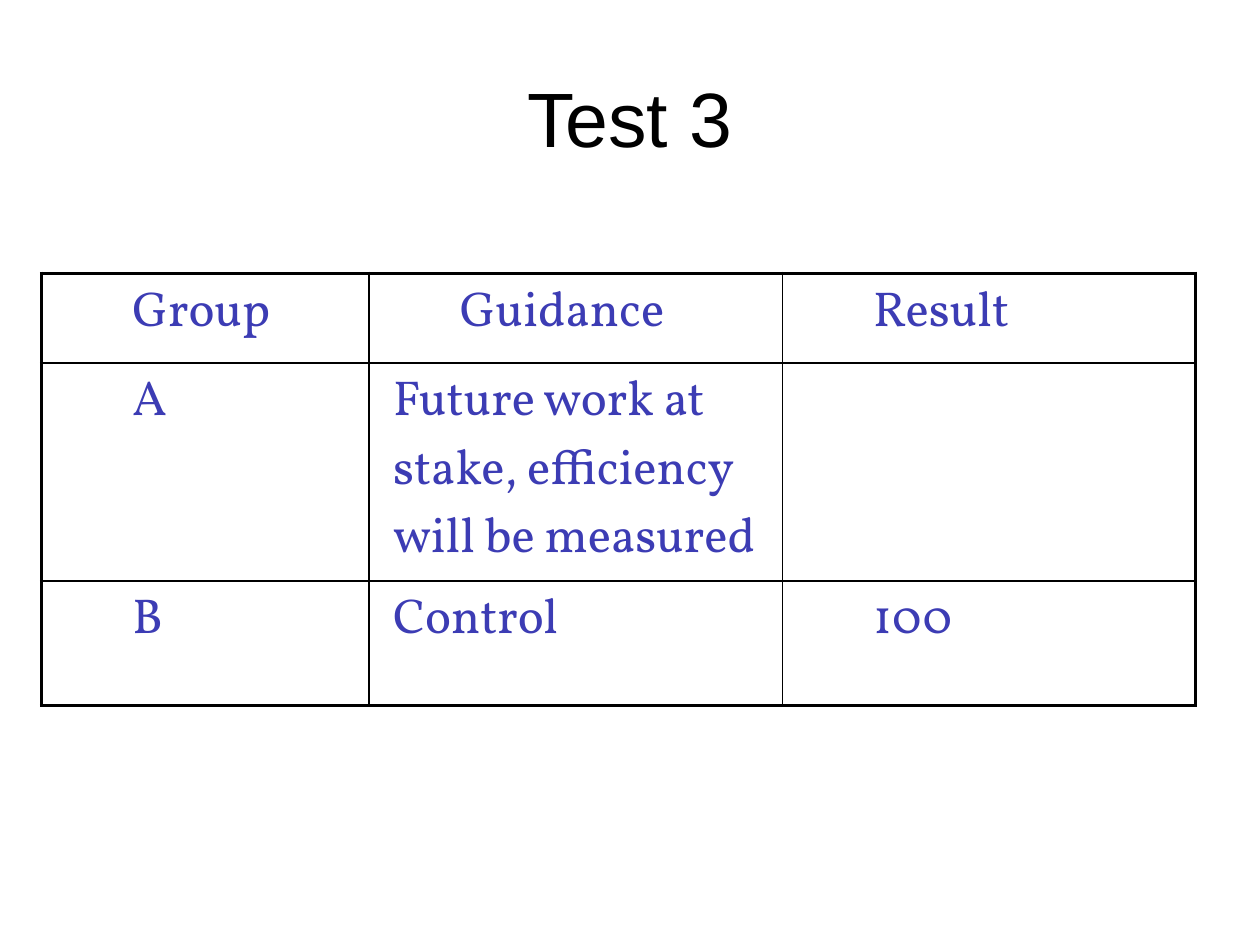
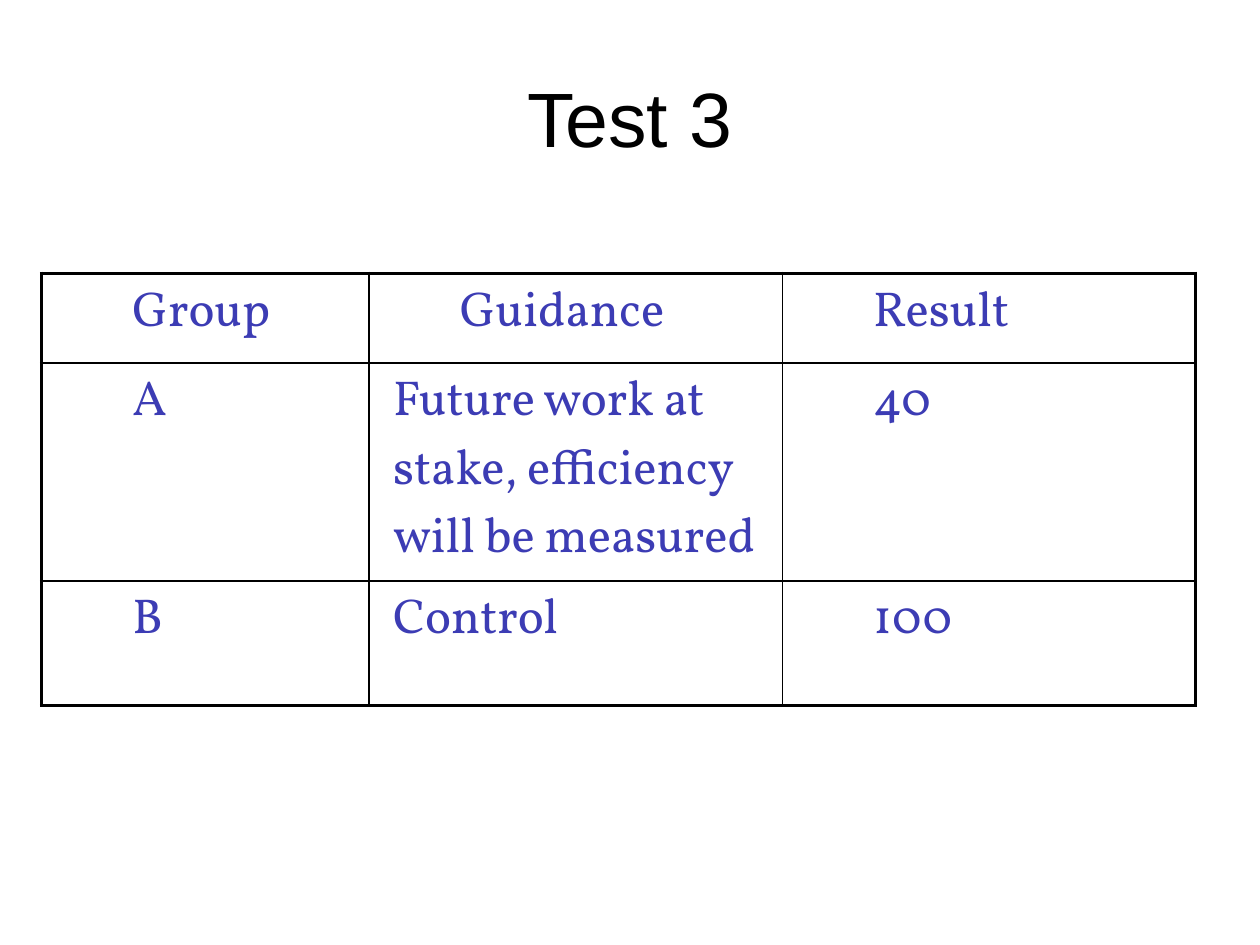
from lxml import etree
from pptx import Presentation
from pptx.dml.color import RGBColor
from pptx.enum.text import MSO_ANCHOR, PP_ALIGN
from pptx.oxml.ns import qn
from pptx.util import Inches, Pt

CENTER = PP_ALIGN.CENTER
MIDDLE = MSO_ANCHOR.MIDDLE
TITLE_ONLY = 5

COLORS = {"title": "000000", "border": "000000", "table text": "3C3CB4"}
TITLE_FONT, TABLE_FONT = "Arial", "Vollkorn"
OUTER_LINE, INNER_LINE = Pt(2.25), Pt(1)

COLUMN_WIDTHS = [2.6, 3.28, 3.28]
ROW_HEIGHTS = [0.71, 1.73, 0.99]
WIDE_INDENT, GUIDANCE_INDENT = 0.62, 0.19


class Deck:
    """Holds the style and the current slide."""

    def __init__(self):
        self.presentation = Presentation()
        self.presentation.slide_width = Inches(10)
        self.presentation.slide_height = Inches(7.5)
        self.slide = None

    def add_slide(self):
        layout = self.presentation.slide_layouts[TITLE_ONLY]
        self.slide = self.presentation.slides.add_slide(layout)

    def style(self, paragraph, font, size, color):
        for run in paragraph.runs:
            run.font.name = font
            run.font.size = Pt(size)
            run.font.color.rgb = RGBColor.from_string(COLORS[color])

    def title(self, text):
        heading = self.slide.shapes.title
        heading.left, heading.top = Inches(0.5), Inches(0.3)
        heading.width, heading.height = Inches(9), Inches(1.25)
        frame = heading.text_frame
        frame.text = text
        frame.vertical_anchor = MIDDLE
        frame.paragraphs[0].alignment = CENTER
        self.style(frame.paragraphs[0], TITLE_FONT, 44, "title")

    def border(self, cell, side, width):
        line = etree.SubElement(cell._tc.get_or_add_tcPr(), qn(f"a:ln{side}"), w=str(width))
        fill = etree.SubElement(line, qn("a:solidFill"))
        etree.SubElement(fill, qn("a:srgbClr"), val=COLORS["border"])

    def cell(self, cell, text, indent):
        if not text:
            return
        cell.text = text
        paragraph = cell.text_frame.paragraphs[0]
        paragraph.space_before = Pt(5.6)
        properties = paragraph._p.get_or_add_pPr()
        properties.set("marL", str(Inches(indent)))
        properties.set("indent", "0")
        self.style(paragraph, TABLE_FONT, 28, "table text")

    def table(self, rows):
        last_row, last_column = len(rows) - 1, len(COLUMN_WIDTHS) - 1
        table = self.slide.shapes.add_table(
            len(rows), len(COLUMN_WIDTHS), Inches(0.33), Inches(2.17),
            Inches(sum(COLUMN_WIDTHS)), Inches(sum(ROW_HEIGHTS))).table
        table.first_row = table.horz_banding = False
        for column, width in zip(table.columns, COLUMN_WIDTHS):
            column.width = Inches(width)
        for row, height in zip(table.rows, ROW_HEIGHTS):
            row.height = Inches(height)

        for r, texts in enumerate(rows):
            for c, text in enumerate(texts):
                cell = table.cell(r, c)
                # Guidance entries sit close to the left edge
                is_guidance = r > 0 and c == 1
                if is_guidance:
                    cell.margin_left = 0
                self.cell(cell, text, GUIDANCE_INDENT if is_guidance else WIDE_INDENT)
                # Heavy frame around light inner lines
                outer_sides = {"L": c == 0, "R": c == last_column,
                               "T": r == 0, "B": r == last_row}
                for side, is_outer in outer_sides.items():
                    self.border(cell, side, OUTER_LINE if is_outer else INNER_LINE)
                cell.fill.background()


def main():
    deck = Deck()
    # The result of group A appears on the second slide
    for result_a in ("", "40"):
        deck.add_slide()
        deck.title("Test 3")
        deck.table([
            ["Group", "Guidance", "Result"],
            ["A", "Future work at stake, efficiency will be measured", result_a],
            ["B", "Control", "100"],
        ])
    deck.presentation.save("out.pptx")


if __name__ == "__main__":
    main()
